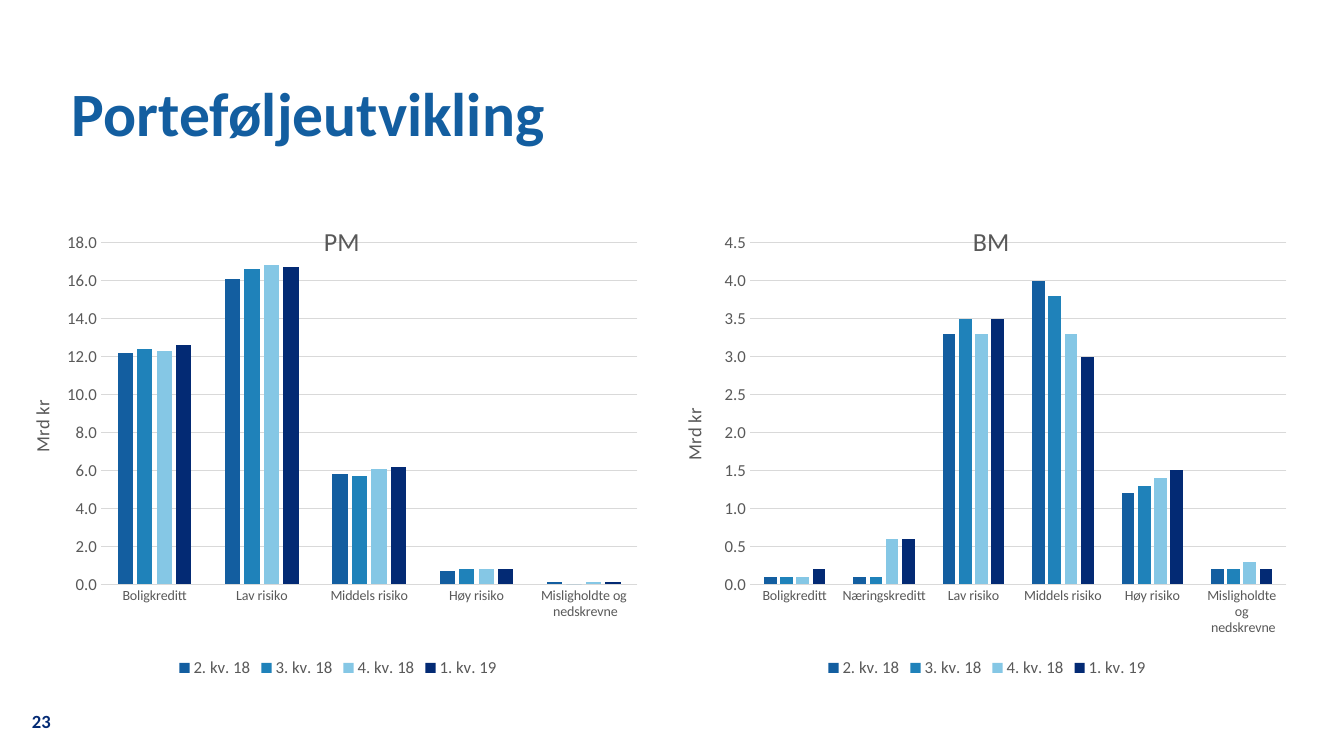
from lxml import etree
from pptx import Presentation
from pptx.chart.data import CategoryChartData
from pptx.dml.color import RGBColor
from pptx.enum.chart import XL_CHART_TYPE, XL_LEGEND_POSITION as LegendPos, XL_TICK_MARK as Tick
from pptx.enum.text import MSO_ANCHOR
from pptx.oxml.ns import qn
from pptx.util import Emu, Pt

SCALE = 914400 / 100.8
COLORS = {"blue": "135EA0", "mid": "1F82BA", "light": "85C7E5",
          "navy": "032A74", "grey": "595959", "grid": "D9D9D9", "black": "000000"}


def style(font, size, color, bold=False):
    values = {"name": "Calibri", "size": Pt(size), "bold": bold}
    for key, value in values.items():
        setattr(font, key, value)
    font.color.rgb = RGBColor.from_string(COLORS[color])


def set_layout(parent, index, **fields):
    """Give a chart part a manual layout, as fractions of the chart."""
    for old in parent.findall(qn("c:layout")):
        parent.remove(old)
    layout = etree.Element(qn("c:layout"))
    manual = etree.SubElement(layout, qn("c:manualLayout"))
    for tag, value in fields.items():
        etree.SubElement(manual, qn(f"c:{tag}")).set("val", str(value))
    parent.insert(index, layout)


prs = Presentation()
prs.slide_width, prs.slide_height = [Emu(round(n * SCALE)) for n in (1344, 756)]
slide = prs.slides.add_slide(prs.slide_layouts[6])

# Heading and page number
texts = [("Porteføljeutvikling", (72, 82, 1159, 74), 44, "blue", MSO_ANCHOR.MIDDLE, 0.8, True),
         ("23", (32, 710, 22, 22), 13.3, "navy", MSO_ANCHOR.TOP, 1.0, False)]
for text, bounds, size, color, anchor, spacing, wrap in texts:
    frame = slide.shapes.add_textbox(*[Emu(round(n * SCALE)) for n in bounds]).text_frame
    settings = {"margin_left": 0, "margin_right": 0, "margin_top": 0, "margin_bottom": 0,
                "word_wrap": wrap, "vertical_anchor": anchor}
    for key, value in settings.items():
        setattr(frame, key, value)
    paragraph = frame.paragraphs[0]
    paragraph.line_spacing = spacing
    run = paragraph.add_run()
    run.text = text
    style(run.font, size, color, True)

# Portfolio charts
quarters = [("2. kv. 18", "blue"), ("3. kv. 18", "mid"),
            ("4. kv. 18", "light"), ("1. kv. 19", "navy")]
risks = ["Lav risiko", "Middels risiko", "Høy risiko", "Misligholdte og\n nedskrevne"]
portfolios = [
    ("PM", 26, 18, 2, ["Boligkreditt"] + risks,
     [(12.2, 16.1, 5.8, 0.7, 0.1), (12.4, 16.6, 5.7, 0.8, 0),
      (12.3, 16.8, 6.1, 0.8, 0.1), (12.6, 16.7, 6.2, 0.8, 0.1)]),
    ("BM", 675, 4.5, 0.5, ["Boligkreditt", "Næringskreditt"] + risks,
     [(0.1, 0.1, 3.3, 4, 1.2, 0.2), (0.1, 0.1, 3.5, 3.8, 1.3, 0.2),
      (0.1, 0.6, 3.3, 3.3, 1.4, 0.3), (0.2, 0.6, 3.5, 3, 1.5, 0.2)]),
]
for name, left, top_value, step, categories, values in portfolios:
    data = CategoryChartData(number_format="#,##0.0")
    data.categories = categories
    for (quarter, _), amounts in zip(quarters, values):
        data.add_series(quarter, amounts)
    bounds = [Emu(round(n * SCALE)) for n in (left, 194, 624, 488)]
    chart = slide.shapes.add_chart(XL_CHART_TYPE.COLUMN_CLUSTERED, *bounds, data).chart
    style(chart.font, 10, "black")

    heading = chart.chart_title
    heading.text_frame.text = name
    style(heading.text_frame.paragraphs[0].runs[0].font, 18.6, "grey")
    set_layout(heading._element, 1, xMode="edge", yMode="edge", x=0.47, y=0.05)
    heading.include_in_layout = True
    plot_area = chart.plots[0]._element.getparent()
    set_layout(plot_area, 0, layoutTarget="inner", xMode="edge", yMode="edge",
               x=0.12, y=0.1, w=0.86, h=0.7)

    chart.has_legend = True
    chart.legend.position = LegendPos.BOTTOM
    chart.legend.include_in_layout = False
    style(chart.legend.font, 12, "grey")

    plot = chart.plots[0]
    plot.gap_width, plot.overlap, plot.vary_by_categories = 219, -27, False
    for series, (_, color) in zip(plot.series, quarters):
        series.format.fill.solid()
        series.format.fill.fore_color.rgb = RGBColor.from_string(COLORS[color])

    amount_axis, category_axis = chart.value_axis, chart.category_axis
    for axis, size in ((category_axis, 10), (amount_axis, 12)):
        axis.major_tick_mark = axis.minor_tick_mark = Tick.NONE
        style(axis.tick_labels.font, size, "grey")
    for line in (category_axis.format.line, amount_axis.major_gridlines.format.line):
        line.color.rgb = RGBColor.from_string(COLORS["grid"])
        line.width = Pt(0.75)
    amount_axis.format.line.fill.background()
    scale = {"minimum_scale": 0, "maximum_scale": top_value, "major_unit": step}
    for key, value in scale.items():
        setattr(amount_axis, key, value)
    amount_axis.tick_labels.number_format = "#,##0.0"
    amount_axis.tick_labels.number_format_is_linked = False
    unit = amount_axis.axis_title.text_frame
    unit.text = "Mrd kr"
    style(unit.paragraphs[0].runs[0].font, 13.3, "grey")

prs.save("out.pptx")
